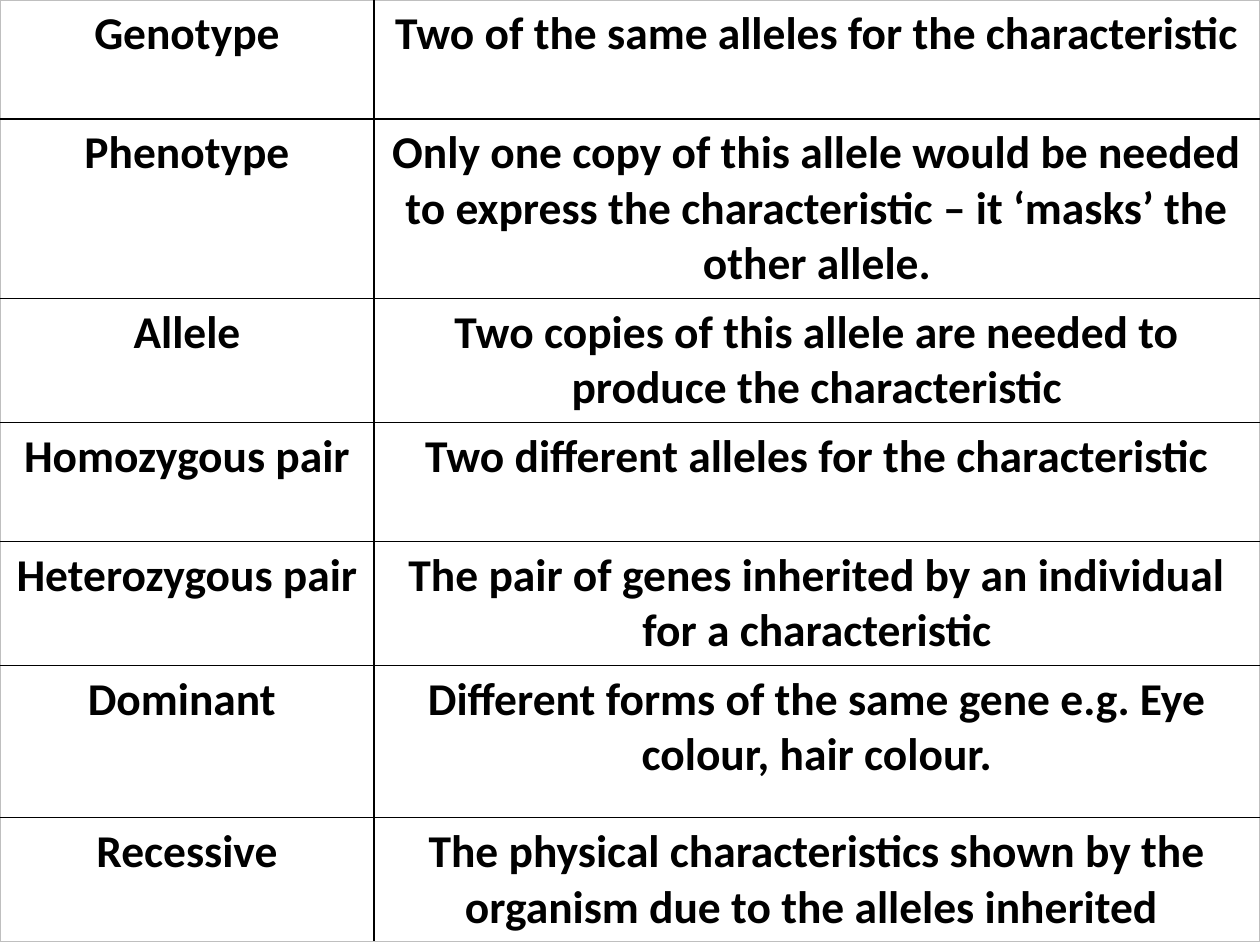
from typing import NamedTuple

from lxml.etree import SubElement
from pptx import Presentation
from pptx.dml.color import RGBColor
from pptx.enum.text import PP_ALIGN
from pptx.oxml.ns import qn
from pptx.util import Inches, Pt

BLACK = RGBColor(0x00, 0x00, 0x00)
GREY = RGBColor(0xBF, 0xBF, 0xBF)
WIDTH, HEIGHT = Inches(10), Inches(7.5)
TERM_SHARE = 0.297
ROW = Inches(0.944)


class Entry(NamedTuple):
    term: str
    meaning: str
    share: float = 1  # height in standard rows


ENTRIES = [
    Entry("Genotype", "Two of the same alleles for the characteristic"),
    Entry("Phenotype", "Only one copy of this allele would be needed to express "
          "the characteristic – it ‘masks’ the other allele.", 1.44),
    Entry("Allele", "Two copies of this allele are needed to produce the characteristic"),
    Entry("Homozygous pair", "Two different alleles for the characteristic"),
    Entry("Heterozygous pair",
          "The pair of genes inherited by an individual for a characteristic"),
    Entry("Dominant ", "Different forms of the same gene e.g. Eye colour, hair colour.", 1.28),
    Entry("Recessive", "The physical characteristics shown by the organism "
          "due to the alleles inherited "),
]


def write(cell, text: str, *, size: float = 26, bold: bool = True,
          color: RGBColor = BLACK, font: str = "Calibri") -> None:
    para = cell.text_frame.paragraphs[0]
    para.alignment = PP_ALIGN.CENTER
    run = para.add_run()
    run.text = text
    run.font.size = Pt(size)
    run.font.bold = bold
    run.font.name = font
    run.font.color.rgb = color


def border(cell, sides: dict[str, RGBColor], width: float = 1) -> None:
    """Line the cell's sides (L, R, T, B), which must precede its fill in the XML."""
    props = cell._tc.get_or_add_tcPr()
    for index, (side, color) in enumerate(sides.items()):
        line = SubElement(props, qn(f"a:ln{side}"), w=str(Pt(width)))
        fill = SubElement(line, qn("a:solidFill"))
        SubElement(fill, qn("a:srgbClr"), val=str(color))
        props.insert(index, line)


def main() -> None:
    deck = Presentation()
    deck.slide_width, deck.slide_height = WIDTH, HEIGHT
    slide = deck.slides.add_slide(deck.slide_layouts[6])

    total = int(ROW * sum(entry.share for entry in ENTRIES))
    table = slide.shapes.add_table(len(ENTRIES), 2, 0, 0, WIDTH, total).table
    table.first_row = table.horz_banding = False
    for column, share in zip(table.columns, (TERM_SHARE, 1 - TERM_SHARE)):
        column.width = int(WIDTH * share)

    last = len(ENTRIES) - 1
    for row, entry in enumerate(ENTRIES):
        table.rows[row].height = int(ROW * entry.share)
        for col, text in enumerate((entry.term, entry.meaning)):
            cell = table.cell(row, col)
            cell.fill.background()
            write(cell, text)
            border(cell, {
                "L": BLACK if col else GREY,
                "R": GREY if col else BLACK,
                "T": BLACK if row else GREY,
                "B": GREY if row == last else BLACK,
            })

    deck.save("out.pptx")


if __name__ == "__main__":
    main()
